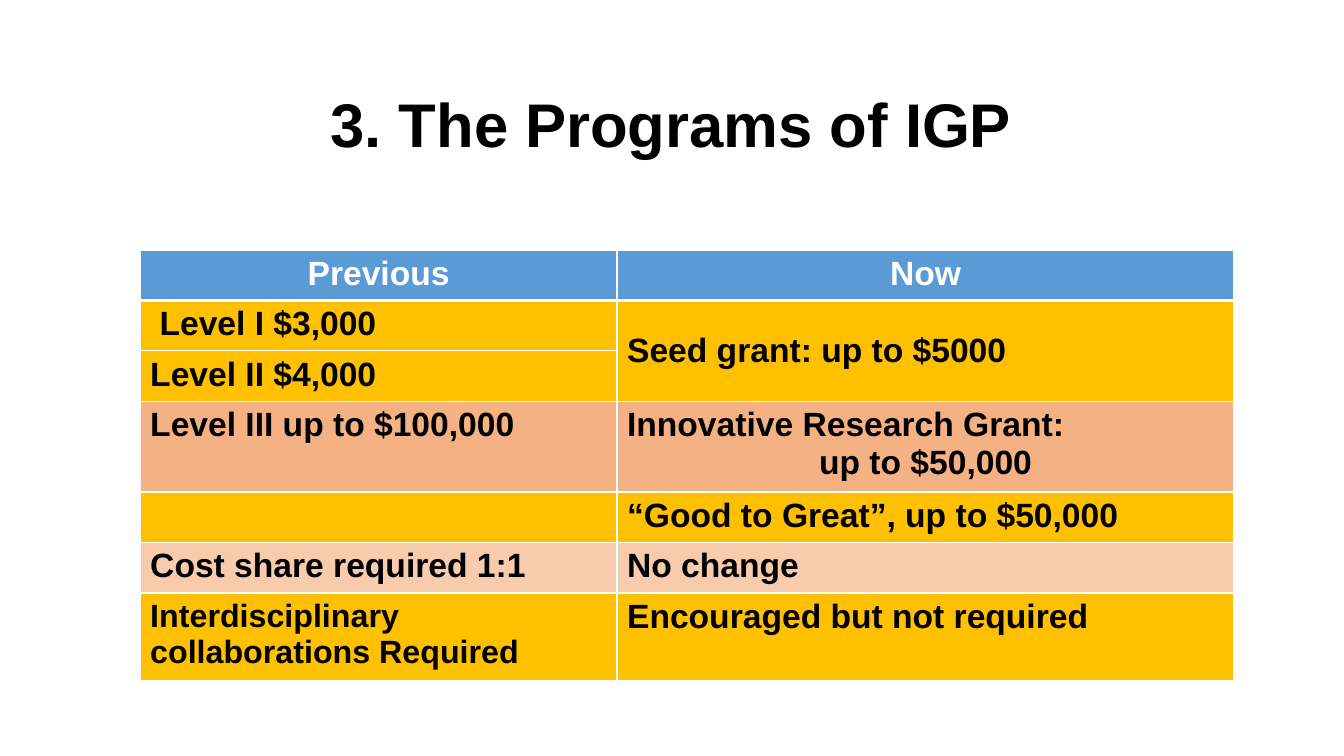
"""Build the slide comparing previous and current IGP programs."""
import pptx
import pptx.dml.color
import pptx.enum.text
import pptx.oxml
import pptx.oxml.ns
import pptx.util
from pptx.util import Inches

COLORS = {
    "black": "000000",
    "white": "FFFFFF",
    "blue": "5B9BD5",
    "gold": "FFC000",
    "orange": "F4B183",
    "peach": "F8CBAD",
}
CENTER = pptx.enum.text.PP_ALIGN.CENTER
LEFT = pptx.enum.text.PP_ALIGN.LEFT
MIDDLE = pptx.enum.text.MSO_ANCHOR.MIDDLE


def add_text(paragraph, text, size, color, alignment):
    paragraph.alignment = alignment
    run = paragraph.add_run()
    run.text = text
    run.font.name = "Arial"
    run.font.size = pptx.util.Pt(size)
    run.font.bold = True
    run.font.color.rgb = pptx.dml.color.RGBColor.from_string(COLORS[color])


def add_border(cell, side, width):
    line = pptx.oxml.parse_xml(
        f'<a:{side} {pptx.oxml.ns.nsdecls("a")} w="{pptx.util.Pt(width)}">'
        f'<a:solidFill><a:srgbClr val="{COLORS["white"]}"/></a:solidFill></a:{side}>'
    )
    cell._tc.get_or_add_tcPr().append(line)


presentation = pptx.Presentation()
presentation.slide_width = Inches(13.33)
presentation.slide_height = Inches(7.5)
slide = presentation.slides.add_slide(presentation.slide_layouts[6])

title = slide.shapes.add_textbox(Inches(0.91), Inches(0.54), Inches(11.5), Inches(1.45))
title.text_frame.word_wrap = True
title.text_frame.vertical_anchor = MIDDLE
title_paragraph = title.text_frame.paragraphs[0]
title_paragraph.line_spacing = 0.9
add_text(title_paragraph, "3. The Programs of IGP", 44, "black", CENTER)

program_rows = [
    ("blue", 0.47, "Previous", "Now"),
    ("gold", 0.47, " Level I $3,000", "Seed grant: up to $5000"),
    ("gold", 0.47, "Level II $4,000", ""),
    ("orange", 0.84, "Level III up to $100,000", "Innovative Research Grant:"),
    ("gold", 0.47, "", "“Good to Great”, up to $50,000"),
    ("peach", 0.47, "Cost share required 1:1", "No change"),
    ("gold", 0.82, "Interdisciplinary collaborations Required", "Encouraged but not required"),
]
column_widths = [4.73, 6.12]
table_height = sum(height for _, height, *_ in program_rows)
table = slide.shapes.add_table(
    len(program_rows), len(column_widths),
    Inches(1.39), Inches(2.48), Inches(sum(column_widths)), Inches(table_height),
).table
for column, width in zip(table.columns, column_widths):
    column.width = Inches(width)

for row_index, (fill, height, *texts) in enumerate(program_rows):
    table.rows[row_index].height = Inches(height)
    is_header = row_index == 0
    for column_index, text in enumerate(texts):
        cell = table.cell(row_index, column_index)
        add_border(cell, "lnL", 1)
        add_border(cell, "lnR", 1)
        add_border(cell, "lnT", 3 if row_index == 1 else 1)
        add_border(cell, "lnB", 3 if is_header else 1)
        cell.fill.solid()
        cell.fill.fore_color.rgb = pptx.dml.color.RGBColor.from_string(COLORS[fill])
        if text:
            add_text(
                cell.text_frame.paragraphs[0], text,
                23 if text.startswith("Interdisciplinary") else 24,
                "white" if is_header else "black",
                CENTER if is_header else LEFT,
            )

seed_grant = table.cell(1, 1)
seed_grant.merge(table.cell(2, 1))
seed_grant.vertical_anchor = MIDDLE
research_grant = table.cell(3, 1).text_frame
add_text(research_grant.add_paragraph(), "up to $50,000", 24, "black", CENTER)

presentation.save("out.pptx")
